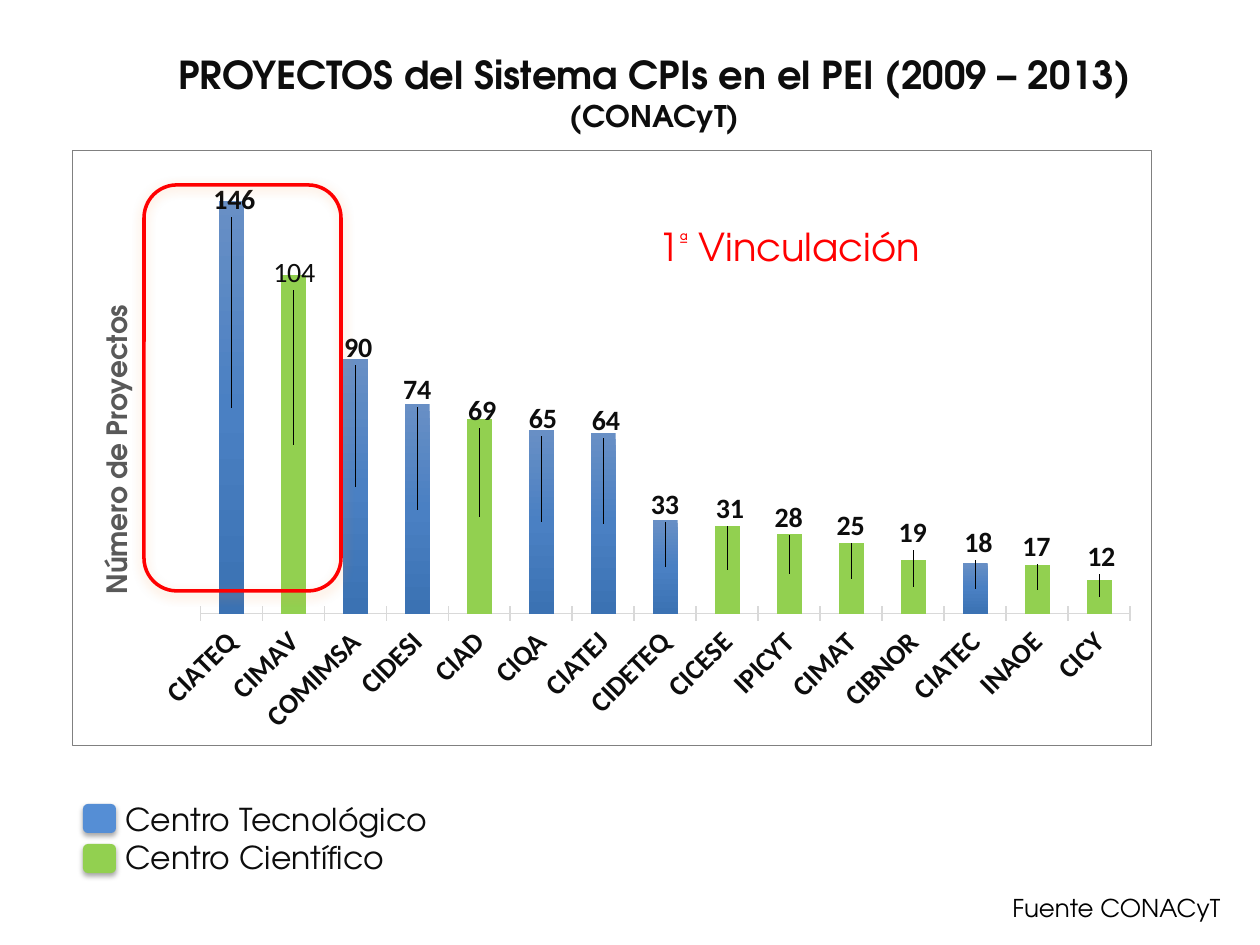
from lxml import etree
from pptx import Presentation
from pptx import util as u
from pptx.chart.data import CategoryChartData
from pptx.dml.color import RGBColor
from pptx.enum import chart as ch, shapes, text
from pptx.oxml import parse_xml
from pptx.oxml.ns import nsdecls, qn

PX = 914400 // 126
FONT, INK, RED = "TeX Gyre Adventor", "0D0D0D", "FF0000"
BLUE, GREEN = "558ED5", "92D050"
GRAD = [(0, "688FC5"), (50, "4A80C3"), (100, "3B72B3")]

# name, projects, scientific centre?, middle of the value label in px
BARS = [
    ("CIATEQ", 146, False, 234, 200), ("CIMAV", 120, True, 294, 273),
    ("COMIMSA", 90, False, 358, 348), ("CIDESI", 74, False, 417, 390),
    ("CIAD", 69, True, 482, 411), ("CIQA", 65, False, 543, 419),
    ("CIATEJ", 64, False, 606, 421), ("CIDETEQ", 33, False, 665, 506),
    ("CICESE", 31, True, 730, 510), ("IPICYT", 28, True, 789, 519),
    ("CIMAT", 25, True, 851, 527), ("CIBNOR", 19, True, 913, 534),
    ("CIATEC", 18, False, 979, 544), ("INAOE", 17, True, 1037, 548),
    ("CICY", 12, True, 1102, 558),
]
TEXTS = {1: "104"}  # labels worded by hand

# box in px, alignment, paragraphs of (text, size, bold, colour)
LEFT, MID = text.PP_ALIGN.LEFT, text.PP_ALIGN.CENTER
NOTES = [
    ((113, 794, 328, 89), LEFT, [("Centro Tecnológico", 18, False, INK),
                                 ("Centro Científico", 18, False, INK)]),
    ((140, 45, 1029, 96), MID,
     [("PROYECTOS del Sistema CPIs en el PEI (2009 – 2013)", 22, True, INK),
      ("(CONACyT)", 17, True, INK)]),
    ((1000, 887, 236, 43), LEFT, [("Fuente CONACyT", 14, False, "000000")]),
    ((646, 217, 289, 59), LEFT, [("1|ª| Vinculación", 22, False, RED)]),
]
KEYS = [(GREEN, 844), (BLUE, 804)]
CHART = (72, 150, 1080, 596)
PLOT = (200, 161, 931, 453)
TOP = 160  # value at the top of the plot


def rgb(code):
    return RGBColor.from_string(code)


def box(*px):
    return [n * PX for n in px]


def style(font, size, bold, color, name=FONT):
    font.size, font.bold, font.name = u.Pt(size), bold, name
    font.color.rgb = rgb(color)


def layout(x, y, w=None, h=None):
    """Manual layout in shares of the chart; an offset if w is None."""
    tags = []
    if w is not None:
        tags = [("layoutTarget", "inner")]
    if w != 0:
        tags += [("xMode", "edge"), ("yMode", "edge")] if w else []
    else:
        tags = [("xMode", "edge"), ("yMode", "edge")]
    tags += [("x", round(x / CHART[2], 4)), ("y", round(y / CHART[3], 4))]
    if w:
        tags += [("w", round(w / CHART[2], 4)), ("h", round(h / CHART[3], 4))]
    body = "".join(f'<c:{t} val="{v}"/>' for t, v in tags)
    return parse_xml(f'<c:layout {nsdecls("c")}><c:manualLayout>{body}'
                     '</c:manualLayout></c:layout>')


def place(node, after, new):
    for old in node.findall(qn("c:layout")):
        node.remove(old)
    if after is None:
        node.insert(0, new)
    else:
        node.find(qn(after)).addnext(new)


def shade(shape, color, blur, dist):
    shape.shadow.inherit = False
    fx = shape._element.spPr.find(qn("a:effectLst"))
    out = etree.SubElement(fx, qn("a:outerShdw"), blurRad=str(u.Pt(blur)),
                           dist=str(u.Pt(dist)), dir="5400000", rotWithShape="0")
    tint = etree.SubElement(out, qn("a:srgbClr"), val=color)
    etree.SubElement(tint, qn("a:alpha"), val="35000")


def add_chart(slide):
    data = CategoryChartData()
    data.categories = [bar[0] for bar in BARS]
    data.add_series("Series 1", [bar[1] for bar in BARS])
    chart = slide.shapes.add_chart(ch.XL_CHART_TYPE.COLUMN_STACKED,
                                   *box(*CHART), data).chart
    chart.has_legend = chart.has_title = False
    style(chart.font, 16, False, "000000", "Calibri")
    root = chart._chartSpace
    root.find(qn("c:chart")).addnext(parse_xml(
        f'<c:spPr {nsdecls("c", "a")}><a:noFill/><a:ln w="9525"><a:solidFill>'
        '<a:srgbClr val="808080"/></a:solidFill></a:ln></c:spPr>'))

    # Axes
    cat, val = chart.category_axis, chart.value_axis
    cat.major_tick_mark = ch.XL_TICK_MARK.CROSS
    style(cat.tick_labels.font, 16, True, INK, "Calibri")
    cat.tick_labels.font._element.getparent().getparent().getparent().find(
        qn("a:bodyPr")).set("rot", "-2700000")
    cat.format.line.color.rgb, cat.format.line.width = rgb("D9D9D9"), u.Pt(1)
    val.minimum_scale, val.maximum_scale = 0, TOP
    val.has_major_gridlines = val.visible = False
    frame = val.axis_title.text_frame
    frame.text = "Número de Proyectos"
    style(frame.paragraphs[0].font, 16, True, "595959")
    turn = frame._txBody.find(qn("a:bodyPr"))
    turn.set("rot", "-5400000")
    turn.set("vert", "horz")
    place(val.axis_title._element, "c:tx", layout(26, 150, 0))
    x, y, w, h = PLOT
    place(root.find(".//" + qn("c:plotArea")), None,
          layout(x - CHART[0], y - CHART[1], w, h))

    # Columns
    plot = chart.plots[0]
    plot.vary_by_categories, plot.gap_width, plot.overlap = False, 150, 100
    ser = plot.series[0]
    ser.format.fill.gradient()
    grad = ser._element.find(".//" + qn("a:gradFill"))
    stops = "".join(f'<a:gs pos="{p * 1000}"><a:srgbClr val="{c}"/></a:gs>'
                    for p, c in GRAD)
    grad.getparent().replace(grad, parse_xml(
        f'<a:gradFill {nsdecls("a")} rotWithShape="1"><a:gsLst>{stops}</a:gsLst>'
        '<a:lin ang="5400000" scaled="0"/></a:gradFill>'))
    ser.data_labels.show_value = True
    style(ser.data_labels.font, 16, True, INK, "Calibri")

    # Labels are moved from the middle of each column to its top
    for i, (_, num, sci, cx, cy) in enumerate(BARS):
        point = ser.points[i]
        if sci:
            point.format.fill.solid()
            point.format.fill.fore_color.rgb = rgb(GREEN)
        label = point.data_label
        if i in TEXTS:
            label.text_frame.text = TEXTS[i]
            style(label.text_frame.paragraphs[0].font, 16, False, INK, "Calibri")
        else:
            style(label.font, 16, True, INK, "Calibri")
        home = x + w * (i + 0.5) / len(BARS), y + h * (1 - num / TOP / 2)
        node = ser._element.xpath(f'c:dLbls/c:dLbl[c:idx/@val="{i}"]')[0]
        place(node, "c:idx", layout(cx - home[0], cy - home[1]))


def add_note(slide, area, align, lines):
    frame = slide.shapes.add_textbox(*box(*area)).text_frame
    frame.word_wrap = False
    frame.auto_size = text.MSO_AUTO_SIZE.SHAPE_TO_FIT_TEXT
    for i, (words, *look) in enumerate(lines):
        para = frame.add_paragraph() if i else frame.paragraphs[0]
        para.alignment = align
        for j, part in enumerate(words.split("|")):
            run = para.add_run()
            run.text = part
            if j == 1:
                run.font._element.set("baseline", "30000")
        style(para.font, *look)


def add_round(slide, *area):
    return slide.shapes.add_shape(shapes.MSO_SHAPE.ROUNDED_RECTANGLE, *box(*area))


def main():
    prs = Presentation()
    prs.slide_width, prs.slide_height = box(1260, 945)
    slide = prs.slides.add_slide(prs.slide_layouts[6])
    add_chart(slide)
    # Legend keys
    for color, y in KEYS:
        key = add_round(slide, 83, y, 33, 29)
        key.fill.solid()
        key.fill.fore_color.rgb = rgb(color)
        key.line.fill.background()
        shade(key, "000000", 3.1, 1.8)
    for note in NOTES:
        add_note(slide, *note)
    # Frame round the two leaders
    ring = add_round(slide, 144, 185, 197, 406)
    ring.fill.background()
    ring.line.color.rgb, ring.line.width = rgb(RED), u.Pt(2)
    shade(ring, "F79646", 6.5, 1.8)
    prs.save("out.pptx")


if __name__ == "__main__":
    main()
